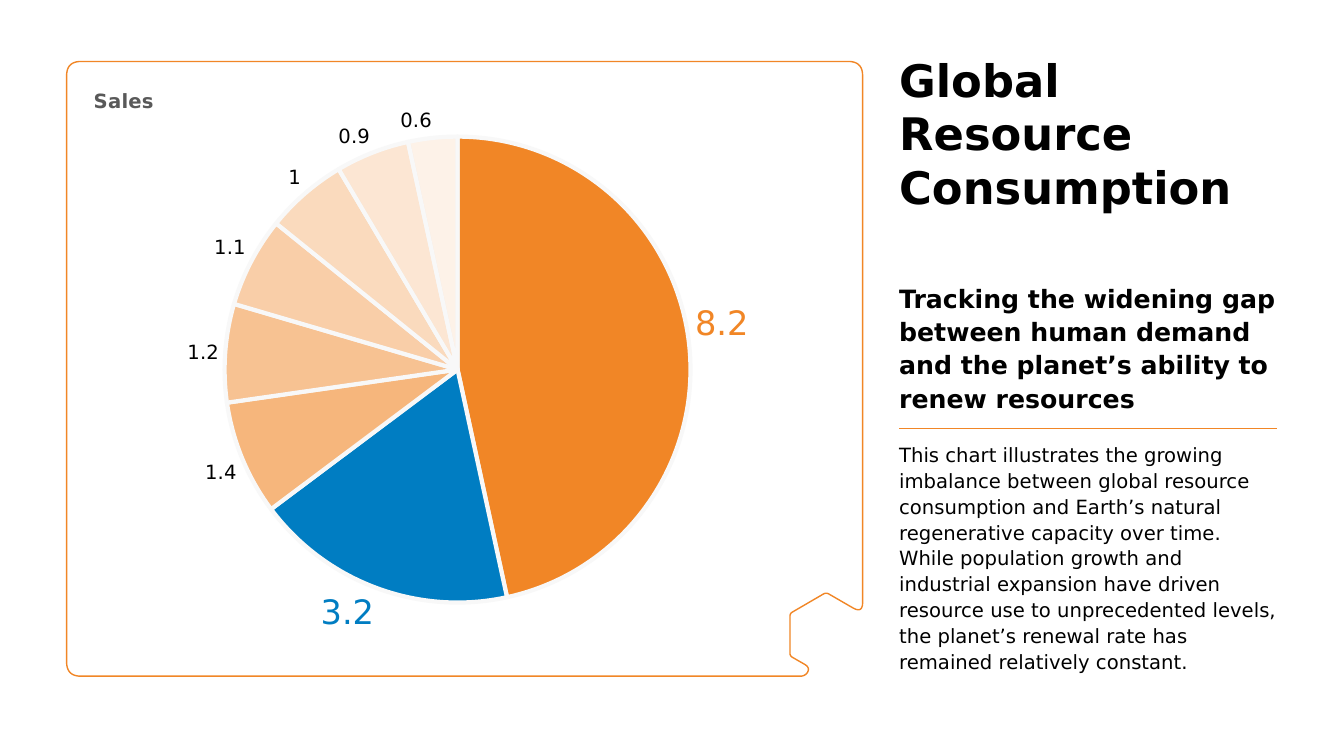
"""Build the Global Resource Consumption slide with its pie chart."""
from dataclasses import dataclass
from math import dist

from lxml.etree import SubElement
from pptx import Presentation
from pptx.chart.data import CategoryChartData as PieData
from pptx.dml.color import RGBColor as Rgb
from pptx.enum.chart import XL_CHART_TYPE as Kind, XL_LABEL_POSITION as Place
from pptx.enum.shapes import MSO_CONNECTOR as Link
from pptx.enum.text import MSO_ANCHOR as Anchor
from pptx.oxml import parse_xml
from pptx.oxml.ns import nsdecls, qn
from pptx.slide import Slide
from pptx.util import Cm, Pt


@dataclass(frozen=True)
class Theme:
    """Colours, type sizes and font of the slide."""
    orange: Rgb = Rgb(0xF1, 0x86, 0x26)
    blue: Rgb = Rgb(0x00, 0x7D, 0xC2)
    black: Rgb = Rgb(0, 0, 0)
    grey: Rgb = Rgb(0x59, 0x59, 0x59)
    pale: Rgb = Rgb(0xF8, 0xF8, 0xF8)
    face: str = "DejaVu Sans"
    head: int = 32
    large: int = 24
    lead: int = 18
    body: int = 14


@dataclass(frozen=True)
class Block:
    """A text block in the right column, in centimetres."""
    text: str
    top: float
    height: float
    size: int
    bold: bool
    anchor: Anchor = Anchor.TOP
    space: float = 1.1


@dataclass(frozen=True)
class Slice:
    """A pie slice with its name, fill and label style."""
    name: str
    value: float
    fill: Rgb
    ink: Rgb
    size: int
    alpha: int = 100


@dataclass(frozen=True)
class Corner:
    """A frame corner and the length its rounding cuts off, in centimetres."""
    x: float
    y: float
    cut: float


THEME = Theme()
LEFT, WIDTH = 22.66, 9.53
STEPS = 12
BLOCKS = (
    Block("Global Resource Consumption", 1.32, 2.95, THEME.head, True, space=1.0),
    Block("Tracking the widening gap between human demand and the planet’s "
          "ability to renew resources", 8.86, 1.55, THEME.lead, True, Anchor.BOTTOM),
    Block("This chart illustrates the growing imbalance between global resource "
          "consumption and Earth’s natural regenerative capacity over time. While "
          "population growth and industrial expansion have driven resource use to "
          "unprecedented levels, the planet’s renewal rate has remained relatively "
          "constant.", 11.1, 5.94, THEME.body, False),
)
TINTS = (("3", 1.4), ("4", 1.2), ("", 1.1), ("", 1), ("", 0.9), ("", 0.6))
SLICES = (
    Slice("1", 8.2, THEME.orange, THEME.orange, THEME.large),
    Slice("2", 3.2, THEME.blue, THEME.blue, THEME.large),
    *(Slice(name, value, THEME.orange, THEME.black, THEME.body, 60 - 10 * i)
      for i, (name, value) in enumerate(TINTS)),
)
FRAME = (
    Corner(1.68, 1.55, 0.36), Corner(21.74, 1.55, 0.36), Corner(21.74, 15.46, 0.28),
    Corner(20.82, 14.93, 0.08), Corner(19.91, 15.46, 0.07), Corner(19.91, 16.53, 0.07),
    Corner(20.45, 16.84, 0.2), Corner(20.27, 17.04, 0.1), Corner(1.68, 17.04, 0.36),
)


def style(font, size: int, ink: Rgb, bold: bool = False) -> None:
    """Set face, size, colour and weight of a font."""
    font.name, font.size, font.bold = THEME.face, Pt(size), bold
    font.color.rgb = ink


def toward(start: Corner, end: Corner) -> tuple[float, float]:
    """Return the point where the rounding of a corner meets its side."""
    part = start.cut / dist((start.x, start.y), (end.x, end.y))
    return start.x + part * (end.x - start.x), start.y + part * (end.y - start.y)


def bend(last: Corner, mid: Corner, after: Corner) -> list[tuple[int, int]]:
    """Return the points of one rounded corner."""
    (ax, ay), (bx, by) = toward(mid, last), toward(mid, after)
    turn = []
    for step in range(STEPS + 1):
        t = step / STEPS
        a, m, b = (1 - t) ** 2, 2 * t * (1 - t), t * t
        turn.append((Cm(a * ax + m * mid.x + b * bx), Cm(a * ay + m * mid.y + b * by)))
    return turn


def add_frame(slide: Slide) -> None:
    """Draw the notched outline around the chart."""
    dots = [dot for i, mid in enumerate(FRAME)
            for dot in bend(FRAME[i - 1], mid, FRAME[(i + 1) % len(FRAME)])]
    maker = slide.shapes.build_freeform(*dots[0])
    maker.add_line_segments(dots[1:], close=True)
    frame = maker.convert_to_shape()
    frame.shadow.inherit = False
    frame.fill.background()
    frame.line.color.rgb = THEME.orange
    frame.line.width = Pt(1)


def add_block(slide: Slide, block: Block) -> None:
    """Write one text block."""
    box = slide.shapes.add_textbox(Cm(LEFT), Cm(block.top), Cm(WIDTH), Cm(block.height))
    frame = box.text_frame
    frame.word_wrap = True
    frame.vertical_anchor = block.anchor
    frame.margin_left = frame.margin_right = frame.margin_top = frame.margin_bottom = 0
    frame.text = block.text
    line = frame.paragraphs[0]
    line.line_spacing = block.space
    style(line.runs[0].font, block.size, THEME.black, block.bold)


def add_rule(slide: Slide) -> None:
    """Draw the line between the lead and the body text."""
    rule = slide.shapes.add_connector(
        Link.STRAIGHT, Cm(LEFT), Cm(10.8), Cm(LEFT + WIDTH), Cm(10.8))
    rule.line.color.rgb = THEME.orange
    rule.line.width = Pt(1)
    SubElement(rule._element.spPr, qn("a:effectLst"))


def layout(**parts: float | str):
    """Return a manual chart layout."""
    tags = "".join(f'<c:{tag} val="{val}"/>' for tag, val in parts.items())
    return parse_xml(f'<c:layout {nsdecls("c")}><c:manualLayout>{tags}'
                     '</c:manualLayout></c:layout>')


def place(chart) -> None:
    """Fix the places of the chart title and the pie."""
    title = chart.chart_title._element
    area = chart._chartSpace.chart.plotArea
    for node in (title, area):
        for old in node.findall(qn("c:layout")):
            node.remove(old)
    title.find(qn("c:tx")).addnext(layout(xMode="edge", yMode="edge", x=0.01, y=0.01))
    area.insert(0, layout(layoutTarget="inner", xMode="edge", yMode="edge",
                          x=0.186, y=0.101, w=0.611, h=0.8))


def add_pie(slide: Slide) -> None:
    """Add the pie chart."""
    data = PieData()
    data.categories = [part.name for part in SLICES]
    data.add_series("Sales", [part.value for part in SLICES])
    chart = slide.shapes.add_chart(
        Kind.PIE, Cm(2.08), Cm(1.96), Cm(19.23), Cm(14.68), data).chart
    chart.has_legend = False
    style(chart.font, THEME.body, THEME.black)
    chart.has_title = True
    title = chart.chart_title.text_frame
    title.text = "Sales"
    style(title.paragraphs[0].runs[0].font, THEME.body, THEME.grey, True)
    place(chart)
    plot = chart.plots[0]
    plot.vary_by_categories = True
    row = plot.series[0]
    tags = row.data_labels
    tags.show_value, tags.position = True, Place.OUTSIDE_END
    style(tags.font, THEME.body, THEME.black)
    for point, part in zip(row.points, SLICES):
        point.format.fill.solid()
        point.format.fill.fore_color.rgb = part.fill
        point.format.line.color.rgb = THEME.pale
        point.format.line.width = Pt(3)
        style(point.data_label.font, part.size, part.ink)
        point.data_label.position = Place.OUTSIDE_END
    fills = row._element.findall("/".join(map(qn, (
        "c:dPt", "c:spPr", "a:solidFill", "a:srgbClr"))))
    for part, fill in zip(SLICES, fills):
        if part.alpha < 100:
            SubElement(fill, qn("a:alpha"), val=str(part.alpha * 1000))


def main() -> None:
    """Build and save the slide."""
    deck = Presentation()
    deck.slide_width, deck.slide_height = Cm(33.87), Cm(19.05)
    slide = deck.slides.add_slide(deck.slide_layouts[6])
    add_frame(slide)
    add_pie(slide)
    for block in BLOCKS:
        add_block(slide, block)
    add_rule(slide)
    deck.save("out.pptx")


if __name__ == "__main__":
    main()
